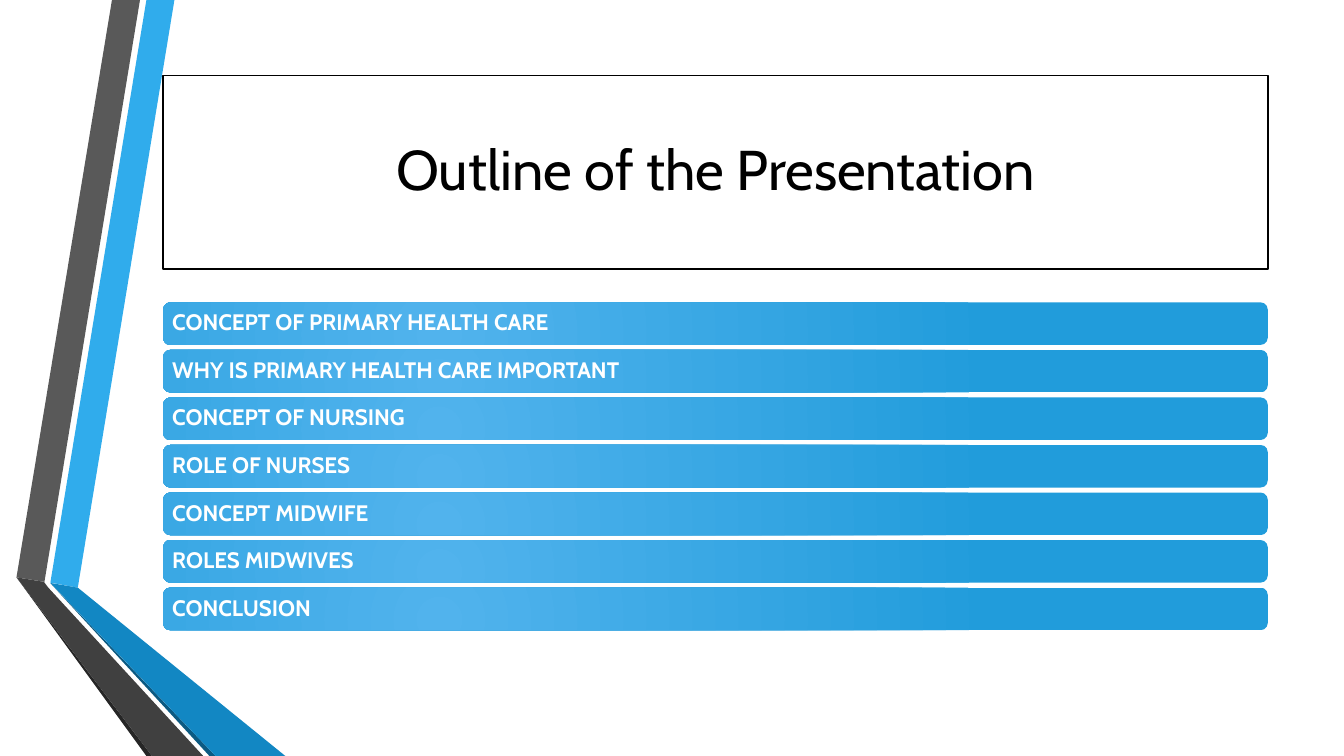
from lxml.etree import SubElement
from pptx import Presentation
from pptx.dml.color import RGBColor
from pptx.enum.shapes import MSO_SHAPE
from pptx.enum.text import MSO_ANCHOR, PP_ALIGN
from pptx.oxml.ns import qn
from pptx.util import Pt

BLACK = RGBColor(0x00, 0x00, 0x00)
WHITE = RGBColor(0xFF, 0xFF, 0xFF)
LIGHT = RGBColor(0x51, 0xB3, 0xED)
DEEP = RGBColor(0x21, 0x9C, 0xDB)
SKY = RGBColor(0x30, 0xAC, 0xEC)
BLUE = RGBColor(0x12, 0x87, 0xC3)
NAVY = RGBColor(0x0C, 0x5A, 0x82)
GREY = RGBColor(0x59, 0x59, 0x59)
DARK = RGBColor(0x40, 0x40, 0x40)
COAL = RGBColor(0x26, 0x26, 0x26)

FONT = "Cabin"
LEFT, WIDTH = 116.6, 789
TOP, STEP, HEIGHT = 216, 33.96, 30.4

BANDS = [
    (SKY, [(36, 416.2), (55.6, 419.8), (124.6, 0), (104.6, 0)]),
    (GREY, [(100, 0), (80, 0), (11.8, 412.4), (31.8, 415.6)]),
    (COAL, [(11.8, 412.4), (104.6, 540), (108.6, 540)]),
    (NAVY, [(36, 416.6), (149.6, 540), (154, 540)]),
    (BLUE, [(36, 416.4), (154, 540), (203.8, 540), (55.6, 419.8)]),
    (DARK, [(145.2, 540), (34.6, 419.8), (31.4, 415.6), (11.8, 412.4),
            (108.6, 540)]),
]

TOPICS = [
    "CONCEPT OF PRIMARY HEALTH CARE",
    "WHY IS PRIMARY HEALTH CARE IMPORTANT",
    "CONCEPT OF NURSING",
    "ROLE OF NURSES",
    "CONCEPT MIDWIFE",
    "ROLES MIDWIVES",
    "CONCLUSION",
]


def write(shape, text, size, color, align):
    frame = shape.text_frame
    frame.word_wrap = True
    frame.vertical_anchor = MSO_ANCHOR.MIDDLE
    para = frame.paragraphs[0]
    para.text = text
    para.alignment = align
    para.line_spacing = 0.9
    para.font.name = FONT
    para.font.size = Pt(size)
    para.font.color.rgb = color
    return frame


def glow(shape):
    """Fill with a round gradient centred low and left of the middle."""
    shape.fill.gradient()
    for stop, color in zip(shape.fill.gradient_stops, (LIGHT, DEEP)):
        stop.color.rgb = color
    grad = shape._element.spPr.find(qn("a:gradFill"))
    grad.remove(grad.find(qn("a:lin")))
    circle = SubElement(grad, qn("a:path"), {"path": "circle"})
    SubElement(circle, qn("a:fillToRect"),
               {"l": "50000", "t": "100000", "r": "100000", "b": "50000"})


deck = Presentation()
deck.slide_width = Pt(960)
deck.slide_height = Pt(540)
slide = deck.slides.add_slide(deck.slide_layouts[6])
shapes = slide.shapes

for color, points in BANDS:
    first, *rest = [(Pt(x), Pt(y)) for x, y in points]
    path = shapes.build_freeform(*first)
    path.add_line_segments(rest)
    band = path.convert_to_shape()
    band.shadow.inherit = False
    band.fill.solid()
    band.fill.fore_color.rgb = color
    band.line.fill.background()

title = shapes.add_shape(MSO_SHAPE.RECTANGLE, Pt(LEFT), Pt(54),
                         Pt(WIDTH), Pt(138.2))
title.shadow.inherit = False
title.fill.solid()
title.fill.fore_color.rgb = WHITE
title.line.color.rgb = BLACK
title.line.width = Pt(1.25)
write(title, "Outline of the Presentation", 40, BLACK, PP_ALIGN.CENTER)

for row, topic in enumerate(TOPICS):
    bar = shapes.add_shape(MSO_SHAPE.ROUNDED_RECTANGLE, Pt(LEFT),
                           Pt(TOP + row * STEP), Pt(WIDTH), Pt(HEIGHT))
    bar.shadow.inherit = False
    bar.line.fill.background()
    glow(bar)
    frame = write(bar, topic, 16, WHITE, PP_ALIGN.LEFT)
    frame.paragraphs[0].font.bold = True
    frame.margin_left = frame.margin_right = Pt(5)
    frame.margin_top = frame.margin_bottom = Pt(4.8)

deck.save("out.pptx")
